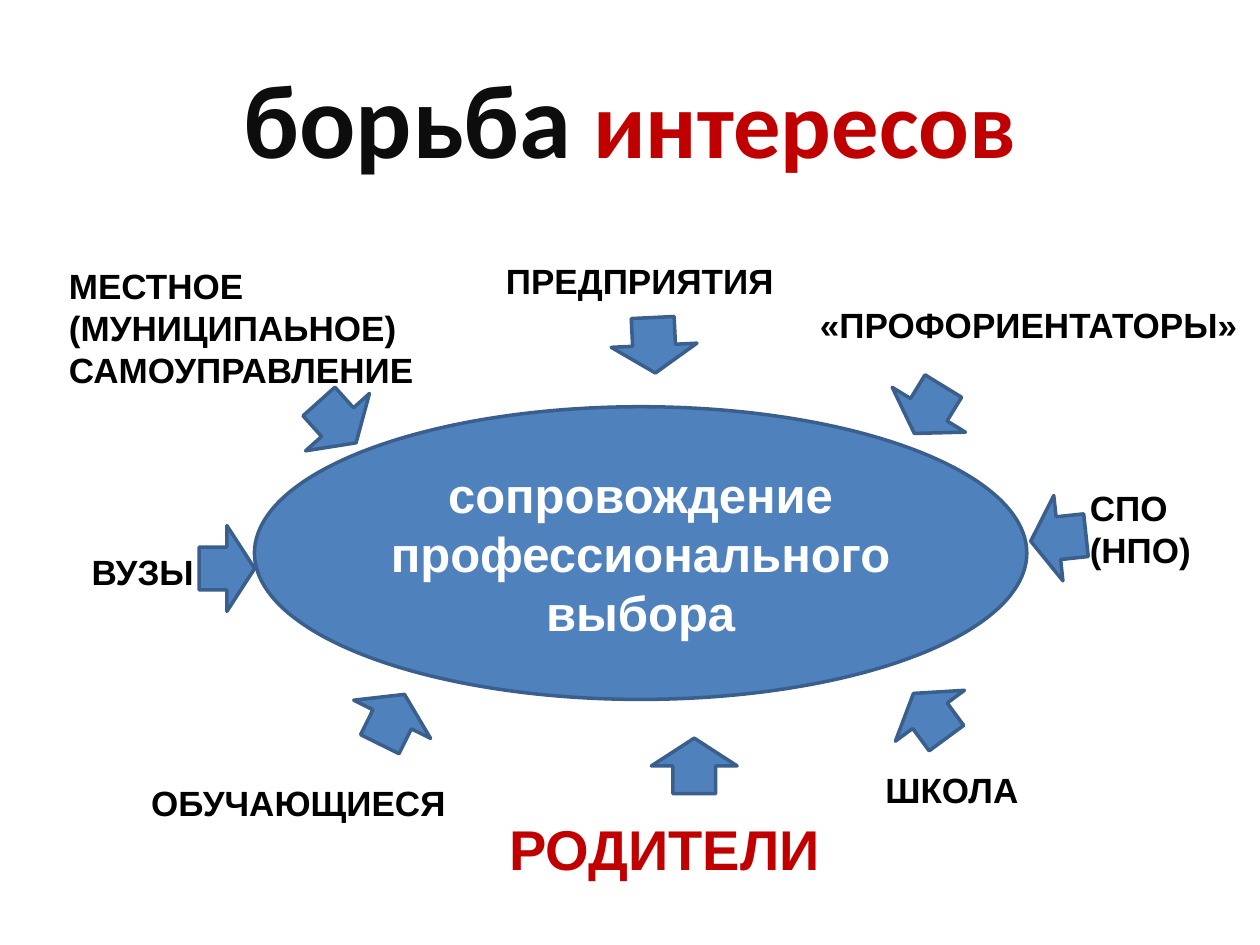
from pptx import Presentation
from pptx.dml.color import RGBColor as Rgb
from pptx.enum.shapes import MSO_SHAPE as Geo
from pptx.enum.text import MSO_ANCHOR as Anchor, MSO_AUTO_SIZE as Fit, PP_ALIGN as Align
from pptx.util import Cm, Pt

HUES = {"ink": "000000", "dark": "0D0D0D", "red": "C00000",
        "white": "FFFFFF", "blue": "4F81BD", "edge": "3A5F8C"}

TITLE = [("борьба", 60, "dark"), (" интересов", 54, "red")]
CORE = "сопровождение профессионального выбора"
RED = {"size": 32, "hue": "red", "align": Align.CENTER}
LABELS = [
    (["ПРЕДПРИЯТИЯ"], (9.95, 5.1, 5.95, 1.02), {}),
    (["МЕСТНОЕ (МУНИЦИПАЬНОЕ) САМОУПРАВЛЕНИЕ"], (1.14, 5.2, 7.78, 2.57), {}),
    (["ВУЗЫ"], (1.6, 10.97, 3.84, 1.02), {}),
    (["СПО", "(НПО)"], (21.72, 9.68, 2.92, 1.96), {}),
    (["«ПРОФОРИЕНТАТОРЫ»"], (16.28, 6, 9.12, 1.02), {}),
    (["ОБУЧАЮЩИЕСЯ"], (2.8, 15.62, 6.48, 1.02), {}),
    (["РОДИТЕЛИ"], (9.7, 16.3, 7.4, 1.63), RED),
    (["ШКОЛА"], (17.6, 15.37, 5.95, 1.12), {}),
]
ARROWS = [
    (5.94, 7.95, 318.1), (17.86, 7.7, 31.5), (12.32, 6.4, 357.2), (3.71, 10.9, 270),
    (20.47, 10.29, 83.9), (7.04, 13.94, 206.4), (17.88, 13.87, 143.6), (13.13, 14.88, 180),
]
WIDE, HIGH = 1.73, 1.12


def tint(hue):
    return Rgb.from_string(HUES[hue])


def write(par, text, size=20, hue="ink", face="Arial", align=Align.LEFT):
    par.alignment = align
    run = par.add_run()
    run.text = text
    font = run.font
    font.size, font.name, font.bold = Pt(size), face, True
    font.color.rgb = tint(hue)


def draw(slide, geo, box, turn=0):
    shape = slide.shapes.add_shape(geo, *map(Cm, box))
    shape.rotation = turn
    shape.shadow.inherit = False
    shape.fill.solid()
    shape.fill.fore_color.rgb = tint("blue")
    shape.line.color.rgb = tint("edge")
    shape.line.width = Pt(2)
    return shape


def label(slide, lines, box, style):
    frame = slide.shapes.add_textbox(*map(Cm, box)).text_frame
    frame.word_wrap = True
    frame.auto_size = Fit.SHAPE_TO_FIT_TEXT
    for i, line in enumerate(lines):
        par = frame.add_paragraph() if i else frame.paragraphs[0]
        write(par, line, **style)


def main():
    deck = Presentation()
    deck.slide_width, deck.slide_height = Cm(25.4), Cm(19.05)
    slide = deck.slides.add_slide(deck.slide_layouts[5])

    title = slide.shapes.title
    title.left, title.top, title.width, title.height = map(Cm, (1.27, 0.76, 22.86, 3.18))
    title.text_frame.vertical_anchor = Anchor.MIDDLE
    for text, size, hue in TITLE:
        write(title.text_frame.paragraphs[0], text, size=size, hue=hue,
              face="Calibri", align=Align.CENTER)

    core = draw(slide, Geo.OVAL, (5.13, 8.2, 15.57, 5.9)).text_frame
    core.word_wrap = True
    core.vertical_anchor = Anchor.MIDDLE
    write(core.paragraphs[0], CORE, size=28, hue="white", align=Align.CENTER)

    for lines, box, style in LABELS:
        label(slide, lines, box, style)
    for left, top, turn in ARROWS:
        draw(slide, Geo.DOWN_ARROW, (left, top, WIDE, HIGH), turn)

    deck.save("out.pptx")


if __name__ == "__main__":
    main()
